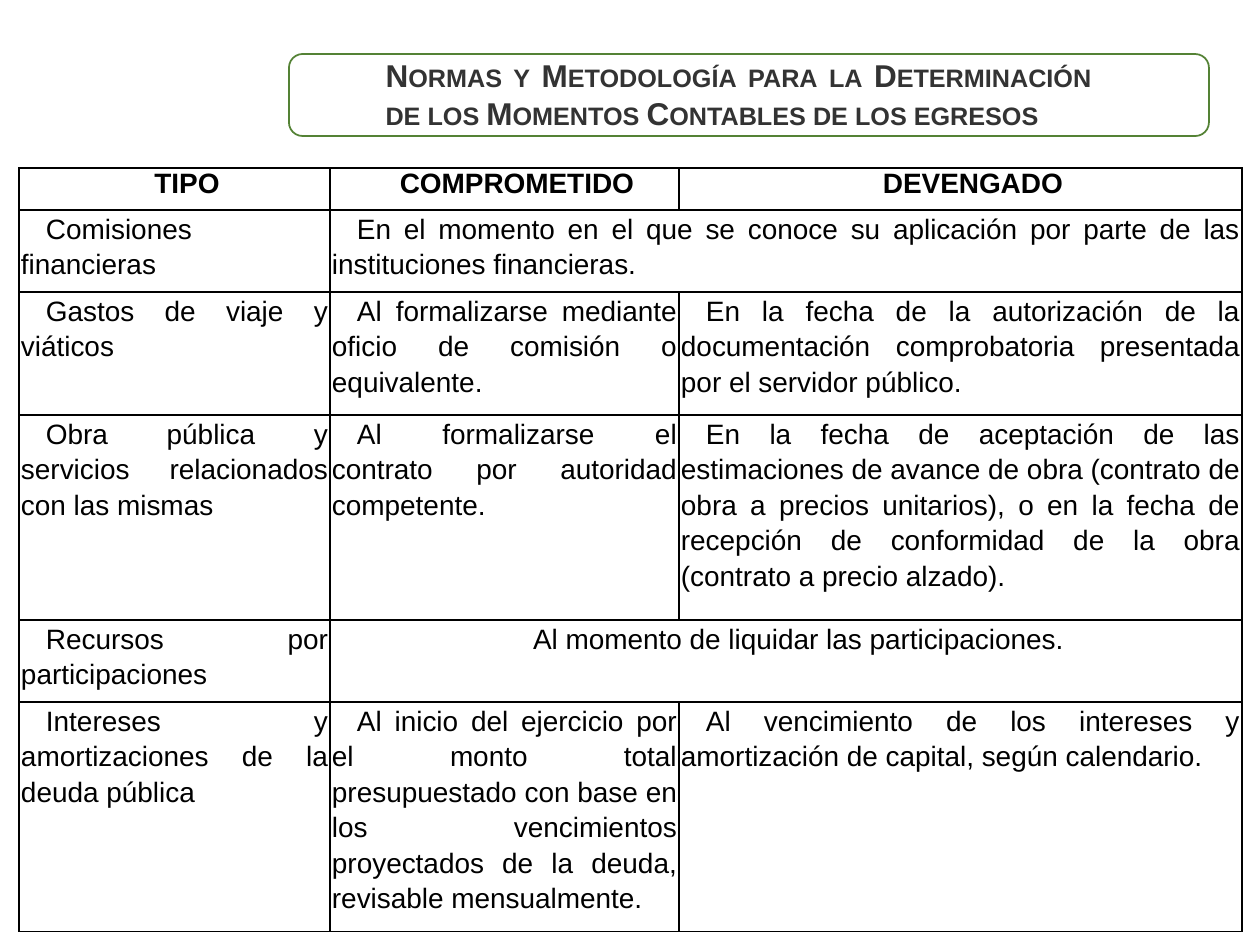
from dataclasses import dataclass

from lxml.etree import SubElement
from pptx import Presentation
from pptx.dml.color import RGBColor
from pptx.enum.shapes import MSO_SHAPE as Preset
from pptx.enum.text import MSO_ANCHOR as Anchor, MSO_AUTO_SIZE as AutoSize, PP_ALIGN as Align
from pptx.oxml.ns import qn
from pptx.util import Emu, Pt


@dataclass(frozen=True)
class Theme:
    font: str = "Arial"
    heading_color: str = "333333"
    text_color: str = "000000"
    frame_color: str = "548235"
    grid_color: str = "000000"
    heading_size: int = 18
    text_size: int = 16
    line_width: int = 1


@dataclass(frozen=True)
class Entry:
    text: str
    align: Align = Align.JUSTIFY
    bold: bool = False
    spacing: float = 1.14
    columns: int = 1


THEME = Theme()
PX_PER_INCH = 126


def px(length: int) -> Emu:
    return Emu(round(length * 914400 / PX_PER_INCH))


def header(text: str) -> Entry:
    return Entry(text, Align.CENTER, True, 1.0)


def add_run(paragraph, text: str, size: int, color: str, bold: bool):
    run = paragraph.add_run()
    run.text = text
    run.font.name = THEME.font
    run.font.size = Pt(size)
    run.font.bold = bold
    run.font.color.rgb = RGBColor.from_string(color)
    return run


def draw_borders(cell) -> None:
    properties = cell._tc.get_or_add_tcPr()
    for position, side in enumerate(("lnL", "lnR", "lnT", "lnB")):
        border = SubElement(properties, qn(f"a:{side}"), w=str(Pt(THEME.line_width)))
        fill = SubElement(border, qn("a:solidFill"))
        SubElement(fill, qn("a:srgbClr"), val=THEME.grid_color)
        properties.remove(border)
        properties.insert(position, border)


def fill_cell(cell, entry: Entry) -> None:
    cell.margin_left = cell.margin_right = px(2)
    cell.margin_top = cell.margin_bottom = 0
    cell.vertical_anchor = Anchor.TOP
    paragraph = cell.text_frame.paragraphs[0]
    paragraph.alignment = entry.align
    paragraph.line_spacing = entry.spacing
    paragraph.space_before = paragraph.space_after = Pt(2)
    indents = paragraph._p.get_or_add_pPr()
    indents.set("marL", "0")
    indents.set("indent", str(px(25)))
    add_run(paragraph, entry.text, THEME.text_size, THEME.text_color, entry.bold)


def add_frame(slide) -> None:
    frame = slide.shapes.add_shape(Preset.ROUNDED_RECTANGLE, px(289), px(54), px(920), px(82))
    frame.shadow.inherit = False
    frame.fill.background()
    frame.line.color.rgb = RGBColor.from_string(THEME.frame_color)
    frame.line.width = Pt(THEME.line_width)


def add_heading(slide, text: str) -> None:
    heading = slide.shapes.title
    heading.left, heading.top, heading.width, heading.height = px(373), px(50), px(731), px(89)
    body = heading.text_frame
    body.word_wrap = True
    body.auto_size = AutoSize.SHAPE_TO_FIT_TEXT
    body.vertical_anchor = Anchor.TOP
    paragraph = body.paragraphs[0]
    paragraph.alignment = Align.JUSTIFY
    run = add_run(paragraph, text, THEME.heading_size, THEME.heading_color, True)
    run.font._element.set("cap", "small")


def add_moments(slide, rows: list[list[Entry]], widths: list[int], heights: list[int]) -> None:
    moments = slide.shapes.add_table(
        len(rows), len(widths), px(19), px(168), px(sum(widths)), px(sum(heights))
    ).table
    moments.first_row = moments.horz_banding = False
    for column, width in zip(moments.columns, widths):
        column.width = px(width)
    for row, height in zip(moments.rows, heights):
        row.height = px(height)
    for cell in moments.iter_cells():
        cell.fill.background()
        draw_borders(cell)
    for row_index, entries in enumerate(rows):
        column_index = 0
        for entry in entries:
            cell = moments.cell(row_index, column_index)
            column_index += entry.columns
            if entry.columns > 1:
                cell.merge(moments.cell(row_index, column_index - 1))
            fill_cell(cell, entry)


HEADING = "Normas y Metodología para la Determinación de los Momentos Contables de los egresos"
MOMENTS = [
    [header("TIPO"), header("COMPROMETIDO"), header("DEVENGADO")],
    [
        Entry("Comisiones financieras"),
        Entry("En el momento en el que se conoce su aplicación por parte de las "
              "instituciones financieras.", columns=2),
    ],
    [
        Entry("Gastos de viaje y viáticos"),
        Entry("Al formalizarse mediante oficio de comisión o equivalente."),
        Entry("En la fecha de la autorización de la documentación comprobatoria "
              "presentada por el servidor público."),
    ],
    [
        Entry("Obra pública y servicios relacionados con las mismas"),
        Entry("Al formalizarse el contrato por autoridad competente."),
        Entry("En la fecha de aceptación de las estimaciones de avance de obra "
              "(contrato de obra a precios unitarios), o en la fecha de recepción "
              "de conformidad de la obra (contrato a precio alzado)."),
    ],
    [
        Entry("Recursos por participaciones"),
        Entry("Al momento de liquidar las participaciones.", Align.CENTER, columns=2),
    ],
    [
        Entry("Intereses y amortizaciones de la deuda pública"),
        Entry("Al inicio del ejercicio por el monto total presupuestado con base en "
              "los vencimientos proyectados de la deuda, revisable mensualmente."),
        Entry("Al vencimiento de los intereses y amortización de capital, según calendario."),
    ],
]


def main() -> None:
    deck = Presentation()
    deck.slide_width, deck.slide_height = px(1260), px(945)
    slide = deck.slides.add_slide(deck.slide_layouts[5])
    add_frame(slide)
    add_heading(slide, HEADING)
    add_moments(slide, MOMENTS, [311, 349, 563], [42, 82, 123, 205, 82, 212])
    deck.save("out.pptx")


if __name__ == "__main__":
    main()
